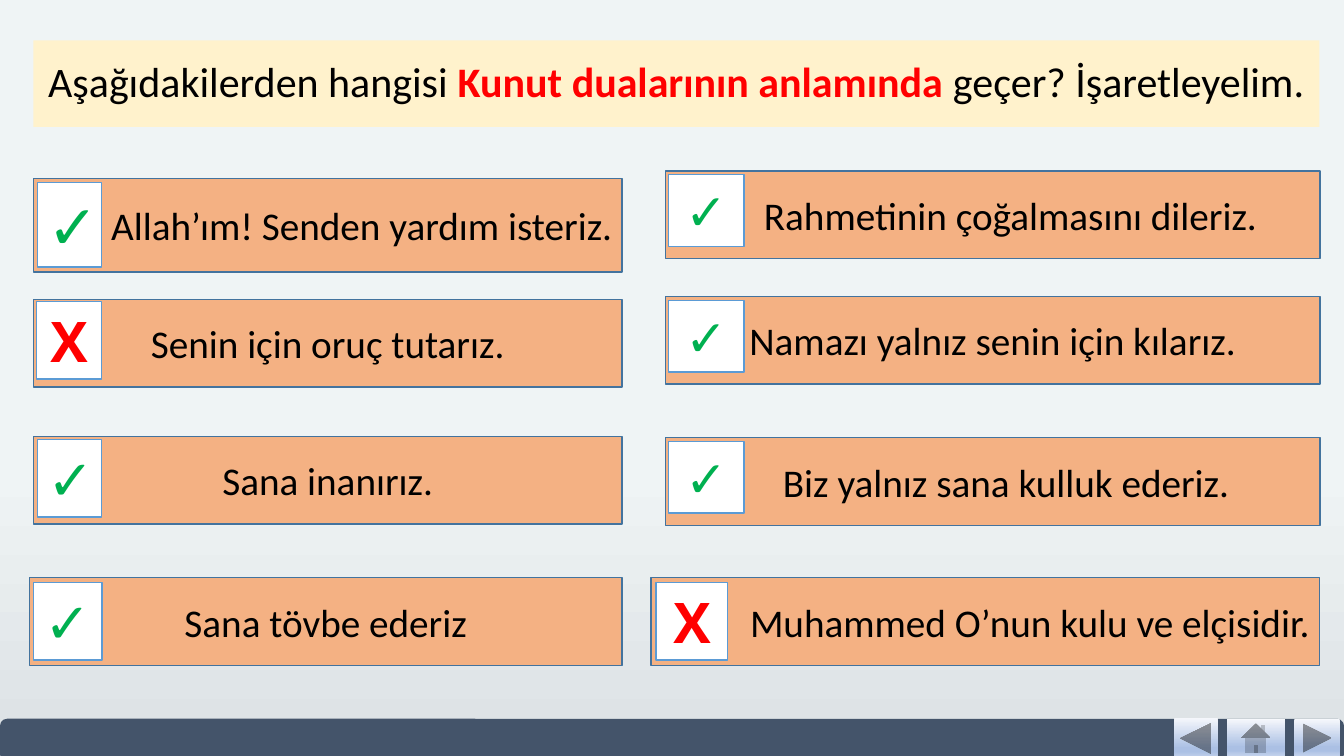
from lxml.etree import SubElement
from pptx import Presentation
from pptx.dml.color import RGBColor
from pptx.enum.shapes import MSO_SHAPE
from pptx.enum.text import MSO_ANCHOR, PP_ALIGN
from pptx.oxml.ns import qn
from pptx.util import Pt

COLORS = {
    "card": "F4B183", "card line": "43739E", "box": "FFFFFF", "box line": "5B9BD5",
    "title": "FFF2CC", "bar": "44546A", "text": "000000", "✓": "00B050", "X": "FF0000",
}
BACKGROUND = [(62, "EFF4F5"), (100, "DCE1E4")]
BUTTON = [(0, "F6F8FC"), (74, "ABC0E4"), (83, "ABC0E4"), (100, "C7D5ED")]

# Title runs: text, colour, bold
TITLE = [
    ("Aşağıdakilerden hangisi ", "text", False),
    ("Kunut dualarının anlamında ", "X", True),
    ("geçer? İşaretleyelim.", "text", False),
]

# Cards: text, alignment, left inset, frame, mark, mark font, mark size, mark frame
CENTER, RIGHT = PP_ALIGN.CENTER, PP_ALIGN.RIGHT
CARDS = [
    ("Allah’ım! Senden yardım isteriz.", RIGHT, 7.2, (23.8, 127.4, 420.5, 67),
     "✓", "Open Sans", 44, (26.6, 130.3, 46, 60.5)),
    ("Senin için oruç tutarız.", CENTER, 7.2, (23.8, 213.8, 420.5, 62.6),
     "X", "Open Sans", 40, (25.9, 215.3, 46.8, 55.4)),
    ("Sana inanırız.", CENTER, 7.2, (23.8, 311.8, 420.5, 62.6),
     "✓", "Open Sans", 40, (26.6, 313.9, 46, 55.4)),
    ("Sana tövbe ederiz", CENTER, 7.2, (20.9, 412.6, 423.4, 62.6),
     "✓", "Open Sans", 40, (23.8, 416.2, 49, 55.4)),
    ("Rahmetinin çoğalmasını dileriz.", CENTER, 32.5, (475.2, 122.2, 467.6, 62.6),
     "✓", "Roboto", 36, (477.4, 124.8, 54, 51.1)),
    ("Namazı yalnız senin için kılarız.", CENTER, 7.2, (475.2, 211.7, 467.6, 62.6),
     "✓", "Roboto", 36, (477.4, 214.6, 54, 51.1)),
    ("Biz yalnız sana kulluk ederiz.", CENTER, 26.2, (475.2, 312.7, 467.6, 62.6),
     "✓", "Roboto", 36, (477.4, 315.4, 54, 51.1)),
    ("Muhammed O’nun kulu ve elçisidir.", RIGHT, 7.2, (465.1, 412.6, 477.5, 62.6),
     "X", "Open Sans", 40, (468.7, 416.2, 51.1, 55.4)),
]
BUTTONS = [
    (MSO_SHAPE.ACTION_BUTTON_BACK_OR_PREVIOUS, (838.8, 512.6, 31, 29.5)),
    (MSO_SHAPE.ACTION_BUTTON_HOME, (876.2, 513.4, 41.8, 27.4)),
    (MSO_SHAPE.ACTION_BUTTON_FORWARD_OR_NEXT, (924.5, 513.4, 32.4, 27.4)),
]


def color(name):
    return RGBColor.from_string(COLORS[name])


def set_gradient(fill, element, stops):
    fill.gradient()
    fill.gradient_angle = 270  # top to bottom
    stop_list = next(element.iter(qn("a:gsLst")))
    for stop in list(stop_list):
        stop_list.remove(stop)
    for position, value in stops:
        stop = SubElement(stop_list, qn("a:gs"), pos=str(position * 1000))
        SubElement(stop, qn("a:srgbClr"), val=value)


def add_block(slide, frame, fill=None, line=None, kind=MSO_SHAPE.RECTANGLE):
    shape = slide.shapes.add_shape(kind, *[Pt(length) for length in frame])
    shape.shadow.inherit = False
    if fill:
        shape.fill.solid()
        shape.fill.fore_color.rgb = color(fill)
    if line:
        shape.line.color.rgb = color(line)
        shape.line.width = Pt(1)
    else:
        shape.line.fill.background()
    return shape


def write(shape, runs, font, size, alignment=CENTER):
    shape.text_frame.vertical_anchor = MSO_ANCHOR.MIDDLE
    paragraph = shape.text_frame.paragraphs[0]
    paragraph.alignment = alignment
    for text, color_name, bold in runs:
        run = paragraph.add_run()
        run.text = text
        run.font.name = font
        run.font.size = Pt(size)
        run.font.bold = bold
        run.font.color.rgb = color(color_name)
    return paragraph


def main():
    presentation = Presentation()
    presentation.slide_width, presentation.slide_height = Pt(960), Pt(540)
    slide = presentation.slides.add_slide(presentation.slide_layouts[6])
    set_gradient(slide.background.fill, slide.element, BACKGROUND)

    # Title band
    title = add_block(slide, (23.8, 28.8, 918.7, 61.9), "title")
    write(title, TITLE, "Calibri", 30).line_spacing = 0.9

    # Answer cards with their marks
    for text, alignment, inset, frame, mark, font, size, mark_frame in CARDS:
        card = add_block(slide, frame, "card", "card line")
        card.text_frame.margin_left = Pt(inset)
        write(card, [(text, "text", False)], "Calibri", 28, alignment)
        box = add_block(slide, mark_frame, "box", "box line")
        write(box, [(mark, mark, True)], font, size)

    # Bottom bar and navigation buttons
    add_block(slide, (0, 513.4, 960, 30.2), "bar", kind=MSO_SHAPE.ROUNDED_RECTANGLE)
    for kind, frame in BUTTONS:
        button = add_block(slide, frame, kind=kind)
        set_gradient(button.fill, button.element, BUTTON)

    presentation.save("out.pptx")


if __name__ == "__main__":
    main()
